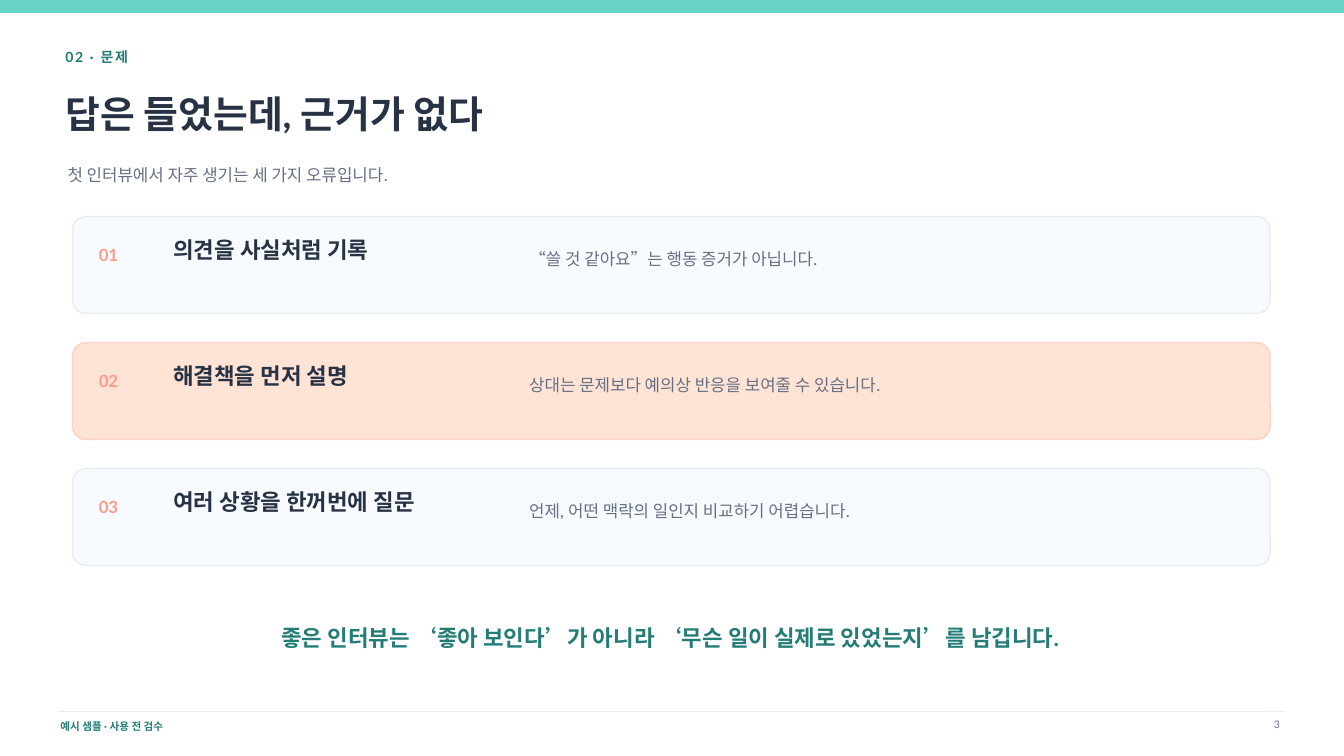
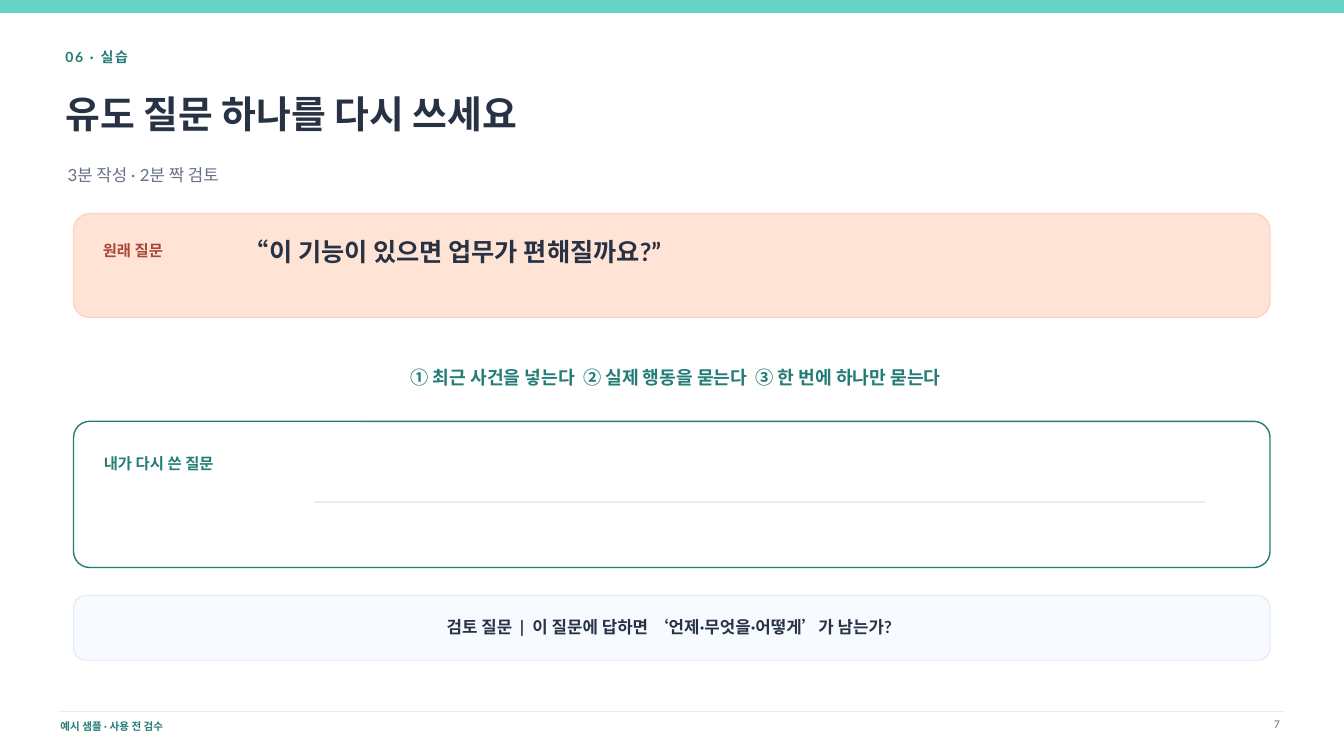
from collections import namedtuple
from dataclasses import dataclass

from pptx import Presentation
from pptx.dml.color import RGBColor
from pptx.enum.shapes import MSO_CONNECTOR, MSO_SHAPE
from pptx.enum.text import MSO_ANCHOR, PP_ALIGN
from pptx.oxml.xmlchemy import OxmlElement
from pptx.util import Pt

LEFT, CENTER, RIGHT = PP_ALIGN.LEFT, PP_ALIGN.CENTER, PP_ALIGN.RIGHT
TOP, MIDDLE = MSO_ANCHOR.TOP, MSO_ANCHOR.MIDDLE
RECT, ROUND = MSO_SHAPE.RECTANGLE, MSO_SHAPE.ROUNDED_RECTANGLE
STRAIGHT = MSO_CONNECTOR.STRAIGHT


@dataclass(frozen=True)
class Theme:
    font: str = "Lato"
    mint: str = "66D3C6"
    teal: str = "237D76"
    ink: str = "273244"
    gray: str = "667085"
    rule: str = "E6EDF3"
    pale: str = "F7FBFF"
    peach: str = "FFE3D5"
    blush: str = "FFD2C8"
    coral: str = "FF9A8B"
    rust: str = "A84937"
    white: str = "FFFFFF"
    tiny: float = 7.5
    tag: float = 10
    label: float = 11
    body: float = 12
    steps: float = 13
    head: float = 16
    quote: float = 18
    title: float = 27


T = Theme()


class Box(namedtuple("Box", "x y w h")):
    def inner(self, x, y, w, h):
        """Give a box whose corner is measured from this one."""
        return Box(self.x + x, self.y + y, w, h)

    def points(self):
        return [Pt(v) for v in self]


PAGE = Box(0, 0, 960, 540)


def rgb(code):
    return RGBColor.from_string(code)


def write(slide, box, text, size, color, bold=True, align=LEFT,
          anchor=MIDDLE, track=0):
    frame = slide.shapes.add_textbox(*box.points()).text_frame
    frame.margin_left = frame.margin_right = 0
    frame.margin_top = frame.margin_bottom = 0
    frame.word_wrap = True
    frame.vertical_anchor = anchor
    para = frame.paragraphs[0]
    para.text = text
    para.alignment = align
    font = para.font
    font.name, font.size, font.bold = T.font, Pt(size), bold
    font.color.rgb = rgb(color)
    if track:
        font._rPr.set("spc", str(round(track * 100)))


def panel(slide, box, fill, edge, radius=0):
    """Draw a filled box; a radius in points rounds its corners."""
    shape = slide.shapes.add_shape(ROUND if radius else RECT, *box.points())
    if radius:
        shape.adjustments[0] = radius / box.h
    shape.shadow.inherit = False
    shape.fill.solid()
    shape.fill.fore_color.rgb = rgb(fill)
    shape.line.color.rgb = rgb(edge)
    shape.line.width = Pt(1)


def rule(slide, x, y, width, weight=1):
    line = slide.shapes.add_connector(
        STRAIGHT, Pt(x), Pt(y), Pt(x + width), Pt(y))
    line.line.color.rgb = rgb(T.rule)
    line.line.width = Pt(weight)
    line._element.spPr.append(OxmlElement("a:effectLst"))


def base(deck, tag, title, lead, number):
    """Add a slide with the shared band, heading and footer."""
    slide = deck.slides.add_slide(deck.slide_layouts[6])
    slide.background.fill.solid()
    slide.background.fill.fore_color.rgb = rgb(T.white)
    panel(slide, PAGE._replace(h=8.64), T.mint, T.mint)
    header(slide, PAGE.inner(46.8, 31, 864, 109), tag, title, lead)
    footer(slide, PAGE.inner(41.76, 508.32, 876.24, 18), number)
    return slide


def header(slide, box, tag, title, lead):
    write(slide, box.inner(0, 0, 352.8, 20), tag, T.tag, T.teal, track=1.2)
    write(slide, box.inner(0, 28, box.w, 44.64), title, T.title, T.ink)
    write(slide, box.inner(1.44, 78.44, 849.6, 30.24), lead, T.body, T.gray,
          bold=False)


def footer(slide, box, number):
    rule(slide, box.x, box.y, box.w)
    write(slide, box.inner(1.44, 4.32, 302.4, 12.96),
          "예시 샘플 · 사용 전 검수", T.tiny, T.teal)
    write(slide, box.inner(box.w - 39.6, 4.32, 36, 12.96), str(number),
          T.tiny, T.gray, bold=False, align=RIGHT, anchor=TOP)


def error(slide, box, number, name, note, fill, edge):
    panel(slide, box, fill, edge, 9.33)
    write(slide, box.inner(18.72, 18.72, 39.6, 17.28), f"{number:02}",
          T.body, T.coral)
    write(slide, box.inner(72, 12.96, 244.8, 21.6), name, T.head, T.ink)
    write(slide, box.inner(326.16, 12.96, 486, 34.56), note, T.body, T.gray,
          bold=False)


def problem(deck):
    slide = base(deck, "02 · 문제", "답은 들었는데, 근거가 없다",
                 "첫 인터뷰에서 자주 생기는 세 가지 오류입니다.", 3)
    calm, warm = (T.pale, T.rule), (T.peach, T.blush)
    errors = [
        ("의견을 사실처럼 기록", "“쓸 것 같아요”는 행동 증거가 아닙니다.", calm),
        ("해결책을 먼저 설명",
         "상대는 문제보다 예의상 반응을 보여줄 수 있습니다.", warm),
        ("여러 상황을 한꺼번에 질문",
         "언제, 어떤 맥락의 일인지 비교하기 어렵습니다.", calm),
    ]
    first, pitch = PAGE.inner(51.84, 154.8, 855.36, 69.12), 90
    for i, (name, note, tone) in enumerate(errors):
        row = first._replace(y=first.y + i * pitch)
        error(slide, row, i + 1, name, note, *tone)
    write(slide, PAGE.inner(64.8, 442.8, 828, 25.92),
          "좋은 인터뷰는 ‘좋아 보인다’가 아니라 ‘무슨 일이 실제로 있었는지’를 남깁니다.",
          T.head, T.teal, align=CENTER)


def prompt(slide, box):
    panel(slide, box, T.peach, T.blush, 11.5)
    write(slide, box.inner(20.88, 17.28, 93.6, 18), "원래 질문",
          T.label, T.rust)
    write(slide, box.inner(121.68, 14.4, 680.4, 24.48),
          "“이 기능이 있으면 업무가 편해질까요?”", T.quote, T.ink)


def answer(slide, box):
    panel(slide, box, T.white, T.teal, 11.5)
    write(slide, box.inner(21.6, 20.88, 144, 18), "내가 다시 쓴 질문",
          T.label, T.teal)
    rule(slide, box.x + 172.08, box.y + 57.6, 635.76, 1.2)


def review(slide, box):
    panel(slide, box, T.pale, T.rule, 8.66)
    write(slide, box.inner(19.44, 13.68, 812.16, 17.28),
          "검토 질문  |  이 질문에 답하면 ‘언제·무엇을·어떻게’가 남는가?",
          T.body, T.ink, align=CENTER)


def practice(deck):
    slide = base(deck, "06 · 실습", "유도 질문 하나를 다시 쓰세요",
                 "3분 작성 · 2분 짝 검토", 7)
    left, width = 52.56, 854.64
    prompt(slide, Box(left, 152.64, width, 74.16))
    write(slide, PAGE.inner(64.8, 257.76, 835.2, 23.04),
          "① 최근 사건을 넣는다  ② 실제 행동을 묻는다  ③ 한 번에 하나만 묻는다",
          T.steps, T.teal, align=CENTER)
    answer(slide, Box(left, 300.96, width, 104.4))
    review(slide, Box(left, 425.52, width, 46.08))


def main():
    deck = Presentation()
    deck.slide_width, deck.slide_height = Pt(PAGE.w), Pt(PAGE.h)
    problem(deck)
    practice(deck)
    deck.save("out.pptx")


if __name__ == "__main__":
    main()
